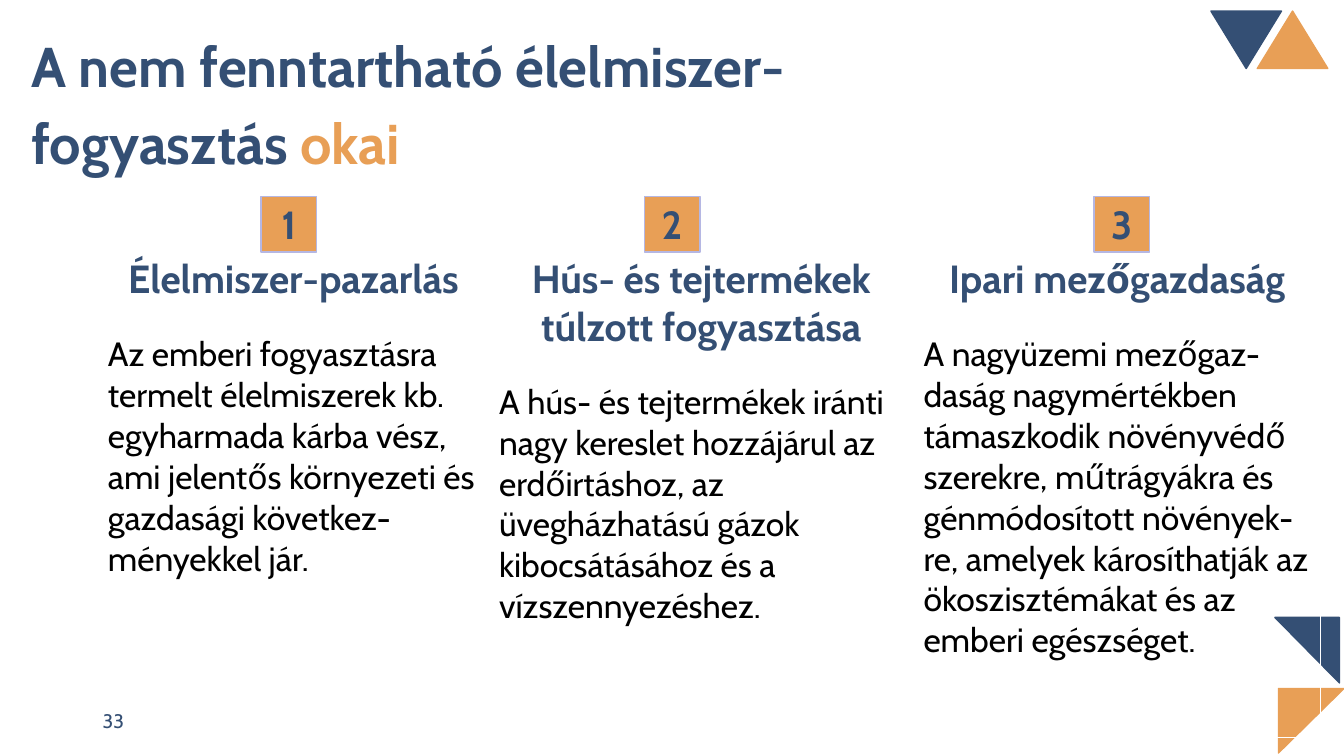
import pptx
import pptx.dml.color
import pptx.enum.shapes
import pptx.enum.text
import pptx.util
from pptx.util import Inches

RGBColor = pptx.dml.color.RGBColor
MSO_SHAPE = pptx.enum.shapes.MSO_SHAPE
ANCHOR = pptx.enum.text.MSO_ANCHOR
ALIGN = pptx.enum.text.PP_ALIGN

NAVY = RGBColor(0x34, 0x4F, 0x74)
ORANGE = RGBColor(0xE8, 0x9F, 0x56)
LILAC = RGBColor(0xB5, 0xB7, 0xE3)
BLACK = RGBColor(0, 0, 0)
FONT = "Cabin"

# Corner triangles: left, top, width, height, rotation, apex, colour
TRIANGLES = [
    (12.47, 0.11, 0.7, 0.57, 0, 0.5, ORANGE),
    (12.68, 6.83, 0.65, 0.64, 180, 1, ORANGE),
    (12.64, 6.13, 0.65, 0.64, 270, 1, NAVY),
    (12.01, 0.11, 0.7, 0.57, 180, 0.5, NAVY),
]

# Causes: column width, badge left, heading, explanation
CAUSES = [
    (3.88, 2.59, "Élelmiszer-pazarlás",
     "Az emberi fogyasztásra termelt élelmiszerek kb. egyharmada kárba vész, "
     "ami jelentős környezeti és gazdasági következ-ményekkel jár."),
    (4.21, 6.39, "Hús- és tejtermékek túlzott fogyasztása",
     "A hús- és tejtermékek iránti nagy kereslet hozzájárul az erdőirtáshoz, "
     "az üvegházhatású gázok kibocsátásához és a vízszennyezéshez."),
    (4.04, 10.85, "Ipari mezőgazdaság",
     "A nagyüzemi mezőgaz-daság nagymértékben támaszkodik növényvédő szerekre, "
     "műtrágyákra és génmódosított növények-re, amelyek károsíthatják az "
     "ökoszisztémákat és az emberi egészséget."),
]


def style(font, size, colour, bold=False):
    font.name = FONT
    font.size = pptx.util.Pt(size)
    font.bold = bold
    font.color.rgb = colour


def add_filled(slide, kind, box, adjustment, fill, line, line_width=1):
    shape = slide.shapes.add_shape(kind, *map(Inches, box))
    shape.shadow.inherit = False
    shape.adjustments[0] = adjustment
    shape.fill.solid()
    shape.fill.fore_color.rgb = fill
    shape.line.color.rgb = line
    shape.line.width = pptx.util.Pt(line_width)
    return shape


def add_triangle(slide, left, top, width, height, rotation, apex, colour):
    triangle = add_filled(slide, MSO_SHAPE.ISOSCELES_TRIANGLE,
                          (left, top, width, height), apex, colour, colour)
    triangle.rotation = rotation


def add_badge(slide, number, left):
    badge = add_filled(slide, MSO_SHAPE.ROUNDED_RECTANGLE,
                       (left, 1.95, 0.55, 0.55), 0, ORANGE, LILAC, 1.09)
    frame = badge.text_frame
    frame.margin_left = frame.margin_right = 0
    frame.margin_top = frame.margin_bottom = 0
    frame.vertical_anchor = ANCHOR.MIDDLE
    label = frame.paragraphs[0]
    label.text = str(number)
    label.alignment = ALIGN.CENTER
    style(label.font, 28, NAVY, True)


def set_title(slide):
    title = slide.shapes.title
    title.left, title.top = Inches(0.21), Inches(0.17)
    title.width, title.height = Inches(12.89), Inches(1.62)
    frame = title.text_frame
    frame.auto_size = pptx.enum.text.MSO_AUTO_SIZE.NONE
    frame.vertical_anchor = ANCHOR.TOP
    frame.text = "A nem fenntartható élelmiszer-\nfogyasztás "
    for line in frame.paragraphs:
        line.alignment = ALIGN.LEFT
        line.line_spacing = pptx.util.Pt(54.7)
        line.space_before = pptx.util.Pt(0)
        style(line.font, 40, NAVY, True)
    accent = frame.paragraphs[1].add_run()
    accent.text = "okai"
    accent.font.color.rgb = ORANGE


def add_causes_table(slide):
    total_width = sum(cause[0] for cause in CAUSES)
    table = slide.shapes.add_table(1, len(CAUSES), Inches(0.97), Inches(2.49),
                                   Inches(total_width), Inches(4.83)).table
    table.first_row = table.horz_banding = False
    for column, (width, _, heading, explanation) in enumerate(CAUSES):
        table.columns[column].width = Inches(width)
        cell = table.cell(0, column)
        cell.fill.background()
        cell.text = f"{heading}\n{explanation}"
        head, body = cell.text_frame.paragraphs
        head.alignment = ALIGN.CENTER
        head.space_after = pptx.util.Pt(22)
        style(head.font, 28, NAVY, True)
        style(body.font, 24, BLACK)


def add_slide_number(slide):
    box = slide.shapes.add_textbox(Inches(0.92), Inches(6.95), Inches(3), Inches(0.4))
    frame = box.text_frame
    frame.word_wrap = True
    frame.vertical_anchor = ANCHOR.MIDDLE
    number = frame.paragraphs[0]
    number.text = "33"
    style(number.font, 14, NAVY)


def main():
    deck = pptx.Presentation()
    deck.slide_width, deck.slide_height = Inches(13.33), Inches(7.5)
    slide = deck.slides.add_slide(deck.slide_layouts[5])

    # Frame of the page
    add_slide_number(slide)
    for triangle in TRIANGLES:
        add_triangle(slide, *triangle)

    # Title and the three numbered causes
    set_title(slide)
    add_causes_table(slide)
    for number, cause in enumerate(CAUSES, 1):
        add_badge(slide, number, cause[1])

    deck.save("out.pptx")


if __name__ == "__main__":
    main()
